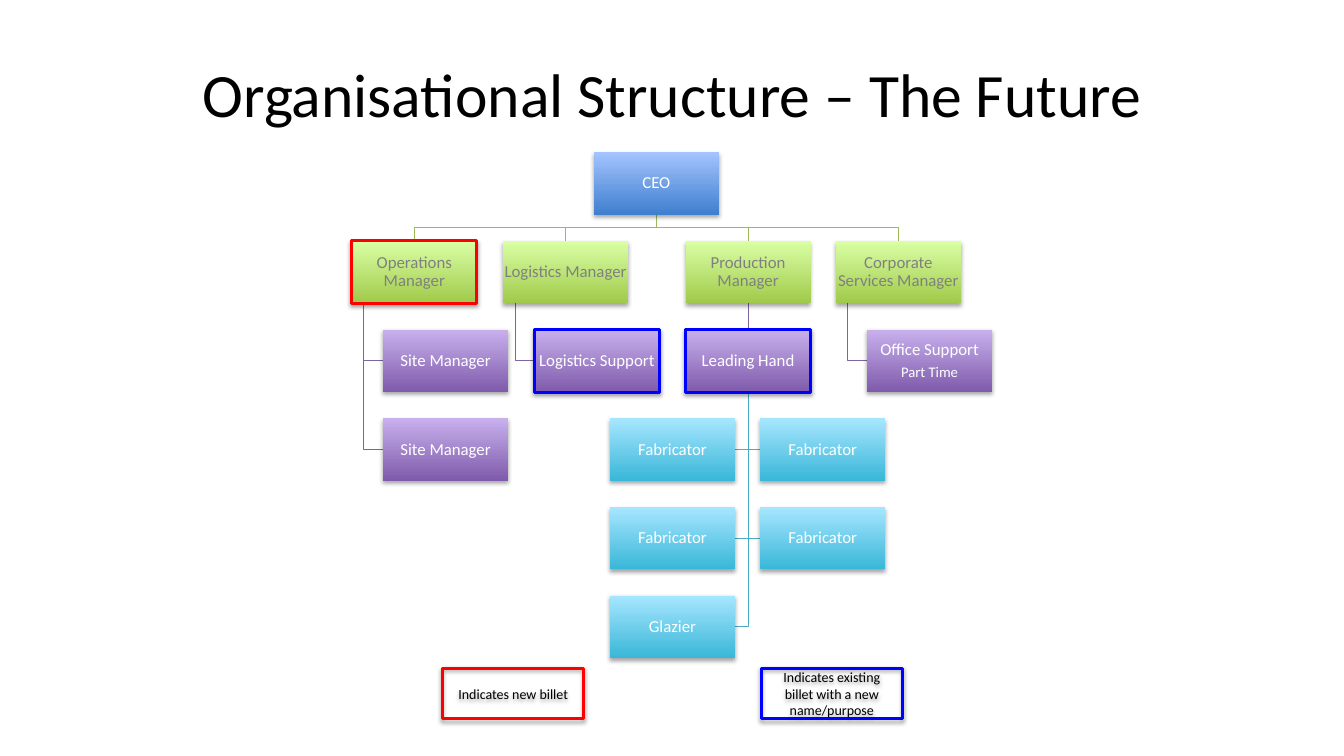
import dataclasses
import typing

import pptx
import pptx.dml.color
import pptx.enum.shapes
import pptx.enum.text
import pptx.oxml
import pptx.oxml.ns
import pptx.util

Inches = pptx.util.Inches
Pt = pptx.util.Pt
RECT = pptx.enum.shapes.MSO_SHAPE.RECTANGLE

FONT = "Calibri"
NEW, RENAMED = "FF0000", "0000FF"
BOX_W, BOX_H = 1.24, 0.62
TOP, ROW_PITCH = 1.51, 0.88
GAP = ROW_PITCH - BOX_H
HANG_INSET = 0.12

SHADOW = (
    f'<a:effectLst {pptx.oxml.ns.nsdecls("a")}>'
    '<a:outerShdw blurRad="39370" dist="22860" dir="5400000" rotWithShape="0">'
    '<a:srgbClr val="000000"><a:alpha val="35000"/></a:srgbClr>'
    '</a:outerShdw></a:effectLst>'
)


@dataclasses.dataclass(frozen=True)
class Tier:
    bottom: str
    top: str
    text: str
    link: str


@dataclasses.dataclass(frozen=True)
class Role:
    lines: tuple[str, ...]
    tier: Tier
    left: float
    row: int
    parent: typing.Optional["Role"] = None
    route: str = ""
    border: str = ""

    @property
    def top(self) -> float:
        return TOP + self.row * ROW_PITCH

    @property
    def center(self) -> float:
        return self.left + BOX_W / 2

    @property
    def middle(self) -> float:
        return self.top + BOX_H / 2


@dataclasses.dataclass(frozen=True)
class Key:
    text: str
    left: float
    border: str


CHIEF = Tier("3F7FCE", "A4C4FF", "FFFFFF", "")
MANAGER = Tier("A0CA4A", "DAFFA5", "808080", "9BBB59")
SUPPORT = Tier("7F5BAB", "C8B0ED", "FFFFFF", "8064A2")
WORKER = Tier("39B7D8", "A7E6FF", "FFFFFF", "4BACC6")

# Roles: "fork" spreads below, "hang" drops on the left, "spine" drops from the centre
ceo = Role(("CEO",), CHIEF, 5.89, 0)
operations = Role(("Operations Manager",), MANAGER, 3.49, 1, ceo, "fork", NEW)
logistics = Role(("Logistics Manager",), MANAGER, 4.99, 1, ceo, "fork")
production = Role(("Production Manager",), MANAGER, 6.8, 1, ceo, "fork")
corporate = Role(("Corporate Services Manager",), MANAGER, 8.29, 1, ceo, "fork")
leading = Role(("Leading Hand",), SUPPORT, 6.8, 2, production, "straight", RENAMED)
ROLES = [
    ceo, operations, logistics, production, corporate, leading,
    *(Role(("Site Manager",), SUPPORT, 3.8, row, operations, "hang") for row in (2, 3)),
    Role(("Logistics Support",), SUPPORT, 5.3, 2, logistics, "hang", RENAMED),
    Role(("Office Support", "Part Time"), SUPPORT, 8.6, 2, corporate, "hang"),
    *(Role(("Fabricator",), WORKER, left, row, leading, "spine")
      for row in (3, 4) for left in (6.05, 7.54)),
    Role(("Glazier",), WORKER, 6.05, 5, leading, "spine"),
]
KEYS = [
    Key("Indicates new billet", 4.39, NEW),
    Key("Indicates existing billet with a new name/purpose", 7.55, RENAMED),
]


def rgb(value: str) -> pptx.dml.color.RGBColor:
    return pptx.dml.color.RGBColor.from_string(value)


def set_border(sp, color: str) -> None:
    if color:
        sp.line.color.rgb = rgb(color)
        sp.line.width = Pt(2.25)
    else:
        sp.line.fill.background()


def add_shadow(sp) -> None:
    sp.shadow.inherit = False
    effects = sp._element.spPr.find(pptx.oxml.ns.qn("a:effectLst"))
    effects.getparent().replace(effects, pptx.oxml.parse_xml(SHADOW))


def add_line(p, text: str, size: float, color: str) -> None:
    p.alignment = pptx.enum.text.PP_ALIGN.CENTER
    r = p.add_run()
    r.text = text
    r.font.name = FONT
    r.font.size = Pt(size)
    r.font.color.rgb = rgb(color)


def middle_frame(sp):
    tf = sp.text_frame
    tf.word_wrap = True
    tf.vertical_anchor = pptx.enum.text.MSO_ANCHOR.MIDDLE
    return tf


def link_points(role: Role) -> list[tuple[float, float]]:
    boss = role.parent
    x, y = boss.center, boss.top + BOX_H
    if role.route == "fork":
        return [(x, y), (x, y + GAP / 2), (role.center, y + GAP / 2), (role.center, role.top)]
    if role.route == "straight":
        return [(x, y), (x, role.top)]
    if role.route == "hang":
        x = boss.left + HANG_INSET
    side = role.left if role.left > x else role.left + BOX_W
    return [(x, y), (x, role.middle), (side, role.middle)]


def draw_link(shapes, role: Role) -> None:
    points = [(Inches(x), Inches(y)) for x, y in link_points(role)]
    if len(points) == 2:
        sp = shapes.add_connector(
            pptx.enum.shapes.MSO_CONNECTOR.STRAIGHT, *points[0], *points[1])
        sp._element.spPr.append(pptx.oxml.parse_xml(
            f'<a:effectLst {pptx.oxml.ns.nsdecls("a")}/>'))
    else:
        builder = shapes.build_freeform(*points[0])
        builder.add_line_segments(points[1:], close=False)
        sp = builder.convert_to_shape()
        sp.fill.background()
        sp.shadow.inherit = False
    sp.line.color.rgb = rgb(role.tier.link)
    sp.line.width = Pt(0.75)


def draw_role(shapes, role: Role) -> None:
    sp = shapes.add_shape(
        RECT, Inches(role.left), Inches(role.top), Inches(BOX_W), Inches(BOX_H))
    sp.fill.gradient()
    sp.fill.gradient_angle = 90
    for stop, color in zip(sp.fill.gradient_stops, (role.tier.bottom, role.tier.top)):
        stop.color.rgb = rgb(color)
    set_border(sp, role.border)
    add_shadow(sp)
    tf = middle_frame(sp)
    tf.margin_left = tf.margin_right = tf.margin_top = tf.margin_bottom = Inches(0.01)
    for i, text in enumerate(role.lines):
        p = tf.add_paragraph() if i else tf.paragraphs[0]
        p.line_spacing = 0.9
        p.space_after = Pt(4.2)
        add_line(p, text, 10.5 if i else 12, role.tier.text)


def draw_key(shapes, key: Key) -> None:
    sp = shapes.add_shape(RECT, Inches(key.left), Inches(6.63), Inches(1.4), Inches(0.5))
    sp.fill.background()
    set_border(sp, key.border)
    add_shadow(sp)
    add_line(middle_frame(sp).paragraphs[0], key.text, 10, "000000")


def main() -> None:
    prs = pptx.Presentation()
    prs.slide_width, prs.slide_height = Inches(13.33), Inches(7.5)
    shapes = prs.slides.add_slide(prs.slide_layouts[6]).shapes

    # Title
    title = shapes.add_textbox(Inches(0.67), Inches(0.3), Inches(12), Inches(1.25))
    add_line(middle_frame(title).paragraphs[0],
             "Organisational Structure – The Future", 44, "000000")

    # Chart: links lie behind the boxes
    for role in ROLES:
        if role.parent:
            draw_link(shapes, role)
    for role in ROLES:
        draw_role(shapes, role)

    # Legend
    for key in KEYS:
        draw_key(shapes, key)

    prs.save("out.pptx")


if __name__ == "__main__":
    main()
